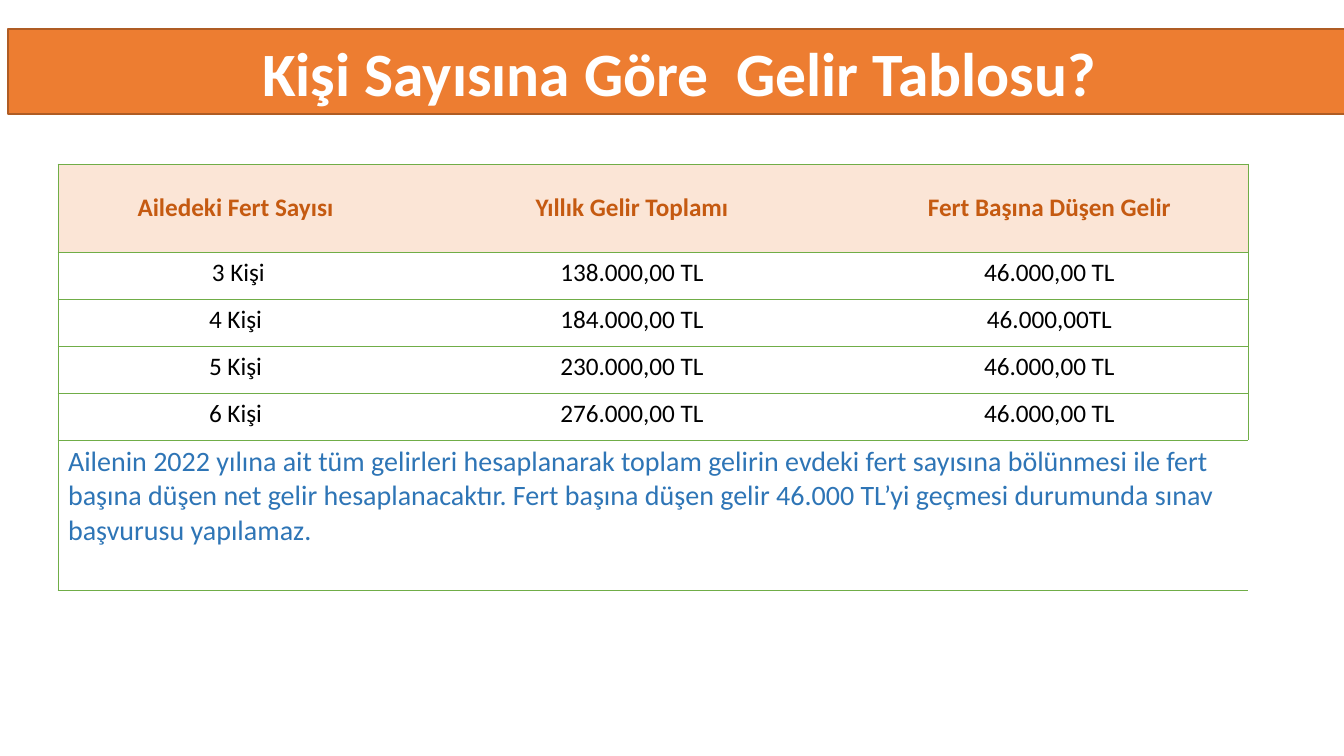
import pptx
import pptx.util
import pptx.dml.color
import pptx.enum.shapes
import pptx.enum.text
import pptx.oxml
import pptx.oxml.ns

TITLE = "Kişi Sayısına Göre  Gelir Tablosu?"
ROWS = [
    ("Ailedeki Fert Sayısı", "Yıllık Gelir Toplamı", "Fert Başına Düşen Gelir"),
    (" 3 Kişi", "138.000,00 TL", "46.000,00 TL"),
    ("4 Kişi", "184.000,00 TL", "46.000,00TL"),
    ("5 Kişi", "230.000,00 TL", "46.000,00 TL"),
    ("6 Kişi", "276.000,00 TL", "46.000,00 TL"),
]
NOTE = (
    "Ailenin 2022 yılına ait tüm gelirleri hesaplanarak toplam gelirin evdeki "
    "fert sayısına bölünmesi ile fert başına düşen net gelir hesaplanacaktır. "
    "Fert başına düşen gelir 46.000 TL’yi geçmesi durumunda sınav başvurusu "
    "yapılamaz."
)
COLUMN_WIDTHS = [355, 438, 397]
ROW_HEIGHTS = [88, 47, 47, 47, 47, 150]
BORDER = "70AD47"
CENTER = pptx.enum.text.PP_ALIGN.CENTER
LEFT = pptx.enum.text.PP_ALIGN.LEFT
MIDDLE = pptx.enum.text.MSO_ANCHOR.MIDDLE


def px(length):
    return round(length * 914400 / 100.8)


def color(value):
    return pptx.dml.color.RGBColor.from_string(value)


def write(frame, text, size, ink, bold=False, align=CENTER):
    para = frame.paragraphs[0]
    para.text = text
    para.alignment = align
    para.font.name = "Calibri"
    para.font.size = pptx.util.Pt(size)
    para.font.bold = bold
    para.font.color.rgb = color(ink)


def set_borders(cell, sides):
    properties = cell._tc.get_or_add_tcPr()
    for index, side in enumerate("LRTB"):
        paint = (
            f'<a:solidFill><a:srgbClr val="{BORDER}"/></a:solidFill>'
            if side in sides else "<a:noFill/>"
        )
        line = pptx.oxml.parse_xml(
            f'<a:ln{side} {pptx.oxml.ns.nsdecls("a")} w="6350">{paint}</a:ln{side}>'
        )
        properties.insert(index, line)


def add_income_table(page):
    table = page.shapes.add_table(
        len(ROW_HEIGHTS), len(COLUMN_WIDTHS), px(58), px(164),
        px(sum(COLUMN_WIDTHS)), px(sum(ROW_HEIGHTS)),
    ).table
    table.first_row = False
    table.horz_banding = False
    for column, width in zip(table.columns, COLUMN_WIDTHS):
        column.width = px(width)
    for row, height in zip(table.rows, ROW_HEIGHTS):
        row.height = px(height)

    last_column = len(COLUMN_WIDTHS) - 1
    for row_index, row in enumerate(table.rows):
        for column_index, cell in enumerate(row.cells):
            if row_index == 0:
                cell.fill.solid()
                cell.fill.fore_color.rgb = color("FBE5D6")
                cell.vertical_anchor = MIDDLE
            else:
                cell.fill.background()
            sides = "TB"
            if column_index == 0:
                sides += "L"
            if column_index == last_column:
                sides += "R"
            set_borders(cell, sides)

    for row_index, texts in enumerate(ROWS):
        heading = row_index == 0
        for column_index, text in enumerate(texts):
            frame = table.cell(row_index, column_index).text_frame
            write(frame, text, 18, "C55A11" if heading else "000000", heading)

    note_row = len(ROWS)
    note_cell = table.cell(note_row, 0)
    note_cell.merge(table.cell(note_row, last_column))
    set_borders_sides = note_cell.text_frame
    write(set_borders_sides, NOTE, 20, "2E75B6", align=LEFT)


def add_title(page):
    banner = page.shapes.add_shape(
        pptx.enum.shapes.MSO_SHAPE.RECTANGLE, px(8), px(29), px(1344), px(85)
    )
    banner.shadow.inherit = False
    banner.fill.solid()
    banner.fill.fore_color.rgb = color("ED7D31")
    banner.line.color.rgb = color("AF5C24")
    banner.line.width = pptx.util.Pt(1)
    banner.text_frame.word_wrap = True
    banner.text_frame.vertical_anchor = MIDDLE
    write(banner.text_frame, TITLE, 44, "FFFFFF", bold=True)


def main():
    deck = pptx.Presentation()
    deck.slide_width = px(1344)
    deck.slide_height = px(756)
    page = deck.slides.add_slide(deck.slide_layouts[6])
    add_income_table(page)
    add_title(page)
    deck.save("out.pptx")


if __name__ == "__main__":
    main()
